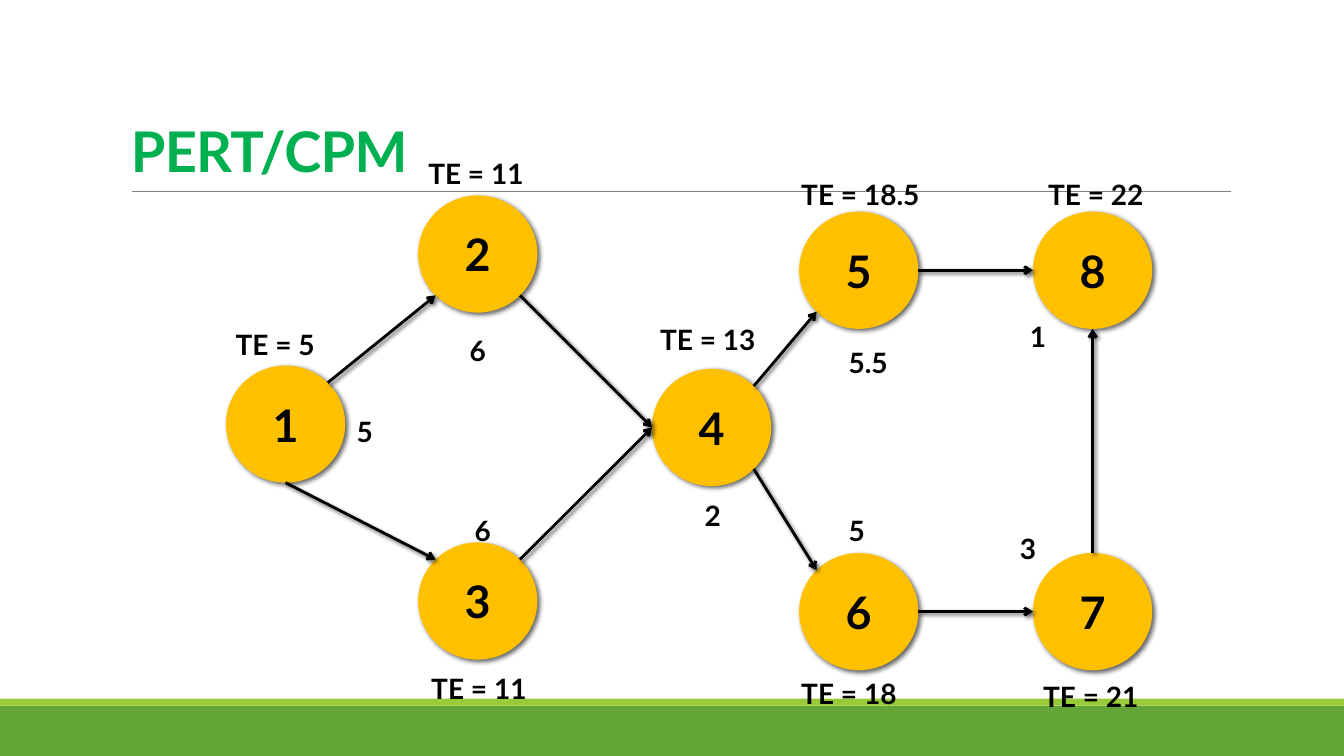
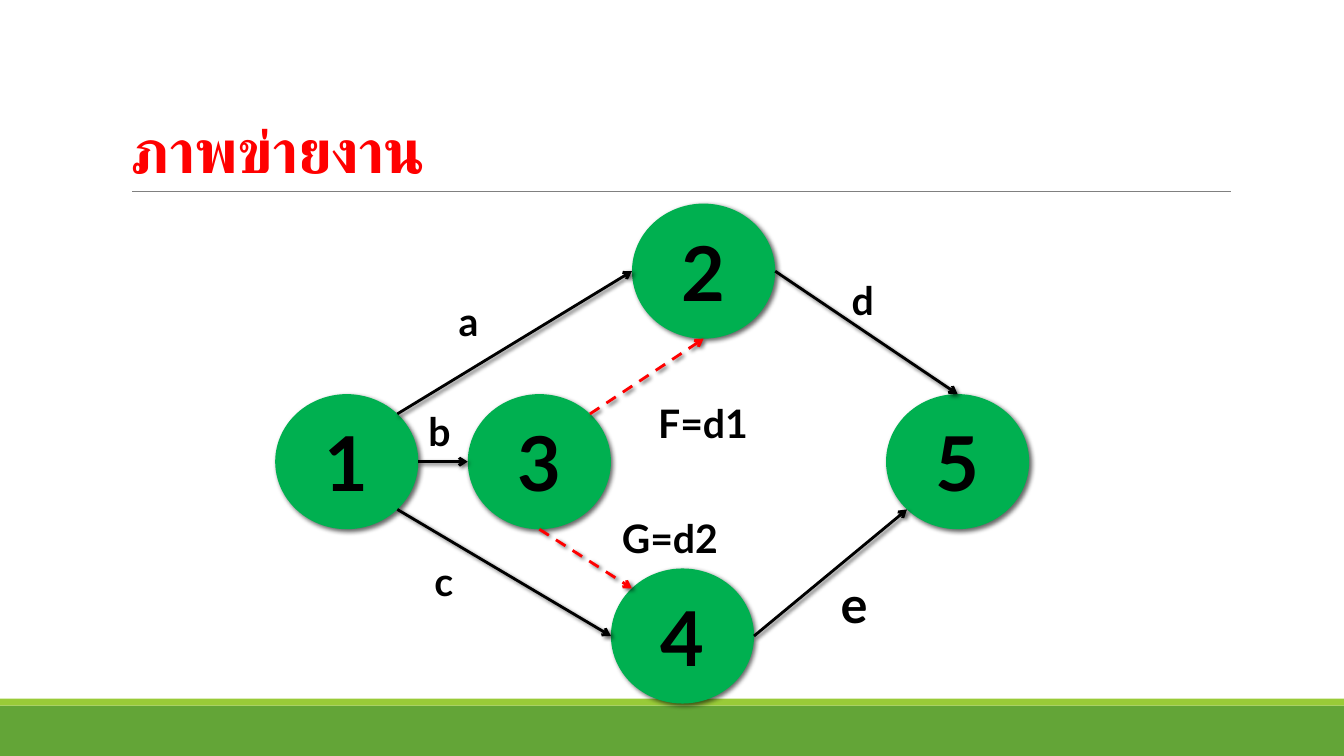
"""Builds two slides that show activity networks as circles joined by arrows."""
import math

import lxml.etree
import pptx
import pptx.dml.color
import pptx.enum.dml
import pptx.enum.shapes
import pptx.enum.text
import pptx.oxml.ns
import pptx.util

RGBColor = pptx.dml.color.RGBColor
BLACK = RGBColor(0x00, 0x00, 0x00)
GREEN = RGBColor(0x00, 0xB0, 0x50)
AMBER = RGBColor(0xFF, 0xC0, 0x00)
RED = RGBColor(0xFF, 0x00, 0x00)
RULE_GRAY = RGBColor(0x80, 0x80, 0x80)
BAND_GREEN = RGBColor(0x63, 0xA5, 0x37)
BAND_LIME = RGBColor(0x99, 0xCB, 0x38)

FONT = "Lato"
SLIDE_WIDTH = pptx.util.Inches(13.333)
SLIDE_HEIGHT = pptx.util.Inches(7.5)

TOP, TOP_LEFT, LEFT, BOTTOM_LEFT, BOTTOM, BOTTOM_RIGHT, RIGHT, TOP_RIGHT = range(8)

PERT_NODES = {
    "1": (21.25, 56.1), "2": (35.55, 33.6), "3": (35.55, 79.5), "4": (52.95, 56.55),
    "5": (63.9, 35.75), "6": (63.9, 80.9), "8": (81.3, 35.75), "7": (81.3, 80.9),
}
PERT_ARROWS = [
    ("1", TOP_RIGHT, "2", BOTTOM_LEFT),
    ("1", BOTTOM, "3", TOP_LEFT),
    ("3", TOP_RIGHT, "4", LEFT),
    ("2", BOTTOM_RIGHT, "4", LEFT),
    ("4", TOP_RIGHT, "5", BOTTOM_LEFT),
    ("4", BOTTOM_RIGHT, "6", TOP_LEFT),
    ("5", RIGHT, "8", LEFT),
    ("6", RIGHT, "7", LEFT),
    ("7", TOP, "8", BOTTOM),
]
PERT_LABELS = [
    ("TE = 5", 16.8, 42.67, 9), ("TE = 11", 31.13, 20, 9),
    ("TE = 11", 31.35, 88.13, 9), ("TE = 13", 48.38, 42, 9),
    ("TE = 18.5", 58.88, 22.8, 10.6), ("TE = 18", 58.88, 88.8, 10.6),
    ("TE = 22", 77.25, 22.8, 10.6), ("TE = 21", 76.88, 89.2, 10.6),
    ("5", 25.8, 54.13, 2.5), ("5", 62.4, 67.2, 2.5),
    ("6", 34.58, 67.2, 2.5), ("6", 34.2, 43.47, 2.5),
    ("2", 51.68, 65.33, 2.5), ("5.5", 62.4, 45.07, 4.8),
    ("1", 75.9, 41.6, 4.8), ("3", 75.15, 69.6, 4.8),
]

WORK_NODES = {
    "1": (25.8, 61.07), "2": (52.35, 35.87), "3": (40.13, 61.07),
    "4": (50.78, 84.13), "5": (71.25, 61.07),
}
WORK_ARROWS = [
    ("1", TOP_RIGHT, "2", LEFT),
    ("1", RIGHT, "3", LEFT),
    ("1", BOTTOM_RIGHT, "4", LEFT),
    ("2", RIGHT, "5", TOP),
    ("4", RIGHT, "5", BOTTOM_LEFT),
]
DUMMY_ARROWS = [("3", TOP_RIGHT, "2", BOTTOM), ("3", BOTTOM, "4", TOP_LEFT)]
WORK_LABELS = [
    ("a", 33.38, 38.67, 6.7), ("b", 31.13, 53.2, 6.7), ("c", 31.58, 73.07, 6.7),
    ("d", 62.63, 35.87, 6.7), ("F=d1", 48.23, 52.13, 12.4), ("G=d2", 45.53, 67.33, 12.4),
]
LARGE_LABELS = [("e", 61.8, 75.2, 6.7)]


def across(percent):
    return round(SLIDE_WIDTH * percent / 100)


def down(percent):
    return round(SLIDE_HEIGHT * percent / 100)


def add_child(parent, tag, **attributes):
    child = lxml.etree.SubElement(parent, pptx.oxml.ns.qn(tag))
    for name, value in attributes.items():
        child.set(name, str(value))
    return child


def add_shadow(properties, blur):
    effects = properties.find(pptx.oxml.ns.qn("a:effectLst"))
    if effects is None:
        effects = add_child(properties, "a:effectLst")
    shadow = add_child(effects, "a:outerShdw", blurRad=pptx.util.Pt(blur),
                       dist=pptx.util.Pt(2), dir=45 * 60000, algn="ctr", rotWithShape=0)
    color = add_child(shadow, "a:srgbClr", val=BLACK)
    add_child(color, "a:alpha", val=60000)


def add_span(para, text, size, color):
    span = para.add_run()
    span.text = text
    span.font.name = FONT
    span.font.size = pptx.util.Pt(size)
    span.font.bold = True
    span.font.color.rgb = color
    add_child(span.font._element, "a:cs", typeface=FONT)
    return span


def add_filled(slide, kind, box, color):
    shape = slide.shapes.add_shape(kind, *box)
    shape.fill.solid()
    shape.fill.fore_color.rgb = color
    shape.line.fill.background()
    shape.shadow.inherit = False
    return shape


def add_line(slide, start, end, color, width):
    line = slide.shapes.add_connector(pptx.enum.shapes.MSO_CONNECTOR.STRAIGHT, *start, *end)
    line.line.color.rgb = color
    line.line.width = pptx.util.Pt(width)
    add_child(line._element.spPr, "a:effectLst")
    return line


def add_node(slide, name, center, size, color, font_size):
    width, height = across(size[0]), down(size[1])
    box = (across(center[0]) - width // 2, down(center[1]) - height // 2, width, height)
    node = add_filled(slide, pptx.enum.shapes.MSO_SHAPE.OVAL, box, color)
    add_shadow(node._element.spPr, 3.5)
    node.text_frame.vertical_anchor = pptx.enum.text.MSO_ANCHOR.MIDDLE
    para = node.text_frame.paragraphs[0]
    para.alignment = pptx.enum.text.PP_ALIGN.CENTER
    add_span(para, name, font_size, BLACK)
    return node


def site_point(node, site):
    angle = math.radians(45 * site)
    return (round(node.left + node.width / 2 * (1 - math.sin(angle))),
            round(node.top + node.height / 2 * (1 - math.cos(angle))))


def add_arrows(slide, nodes, arrows, color=BLACK, dashed=False):
    for source, source_site, target, target_site in arrows:
        start, end = nodes[source], nodes[target]
        arrow = add_line(slide, site_point(start, source_site),
                         site_point(end, target_site), color, 2)
        if dashed:
            arrow.line.dash_style = pptx.enum.dml.MSO_LINE.DASH
        add_child(arrow.line._get_or_add_ln(), "a:tailEnd", type="arrow")
        add_shadow(arrow._element.spPr, 3)
        joints = arrow._element.nvCxnSpPr.cNvCxnSpPr
        add_child(joints, "a:stCxn", id=start.shape_id, idx=source_site)
        add_child(joints, "a:endCxn", id=end.shape_id, idx=target_site)


def add_labels(slide, labels, size):
    height = pptx.util.Pt(size * 1.2) + pptx.util.Inches(0.1)
    for text, left, top, width in labels:
        box = slide.shapes.add_textbox(across(left), down(top), across(width), height)
        box.text_frame.word_wrap = True
        box.text_frame.auto_size = pptx.enum.text.MSO_AUTO_SIZE.SHAPE_TO_FIT_TEXT
        add_span(box.text_frame.paragraphs[0], text, size, BLACK)


def add_page(deck, title, top, height, size, color):
    slide = deck.slides.add_slide(deck.slide_layouts[6])
    for band_top, band_height, band_color in ((93.33, 6.67, BAND_GREEN), (92.4, 0.93, BAND_LIME)):
        add_filled(slide, pptx.enum.shapes.MSO_SHAPE.RECTANGLE,
                   (0, down(band_top), SLIDE_WIDTH, down(band_height)), band_color)
    rule_top = down(25.33)
    add_line(slide, (across(9.83), rule_top), (across(91.57), rule_top), RULE_GRAY, 0.5)
    box = slide.shapes.add_textbox(across(9), down(top), across(82.5), down(height))
    box.text_frame.word_wrap = True
    box.text_frame.vertical_anchor = pptx.enum.text.MSO_ANCHOR.BOTTOM
    para = box.text_frame.paragraphs[0]
    para.line_spacing = 0.85
    span = add_span(para, title, size, color)
    span.font._element.set("spc", "-50")
    return slide


def add_nodes(slide, centers, size, color, font_size):
    return {name: add_node(slide, name, center, size, color, font_size)
            for name, center in centers.items()}


def add_pert_slide(deck):
    slide = add_page(deck, "PERT/CPM", 13.33, 11.6, 40, GREEN)
    nodes = add_nodes(slide, PERT_NODES, (8.87, 15.5), AMBER, 32)
    add_arrows(slide, nodes, PERT_ARROWS)
    add_labels(slide, PERT_LABELS, 20)


def add_work_slide(deck):
    slide = add_page(deck, "ภาพข่ายงาน", 4.13, 21.2, 44, RED)
    nodes = add_nodes(slide, WORK_NODES, (10.65, 17.87), GREEN, 54)
    add_arrows(slide, nodes, WORK_ARROWS)
    add_arrows(slide, nodes, DUMMY_ARROWS, RED, dashed=True)
    add_labels(slide, WORK_LABELS, 28)
    add_labels(slide, LARGE_LABELS, 36)


def main():
    deck = pptx.Presentation()
    deck.slide_width = SLIDE_WIDTH
    deck.slide_height = SLIDE_HEIGHT
    add_pert_slide(deck)
    add_work_slide(deck)
    deck.save("out.pptx")


if __name__ == "__main__":
    main()
